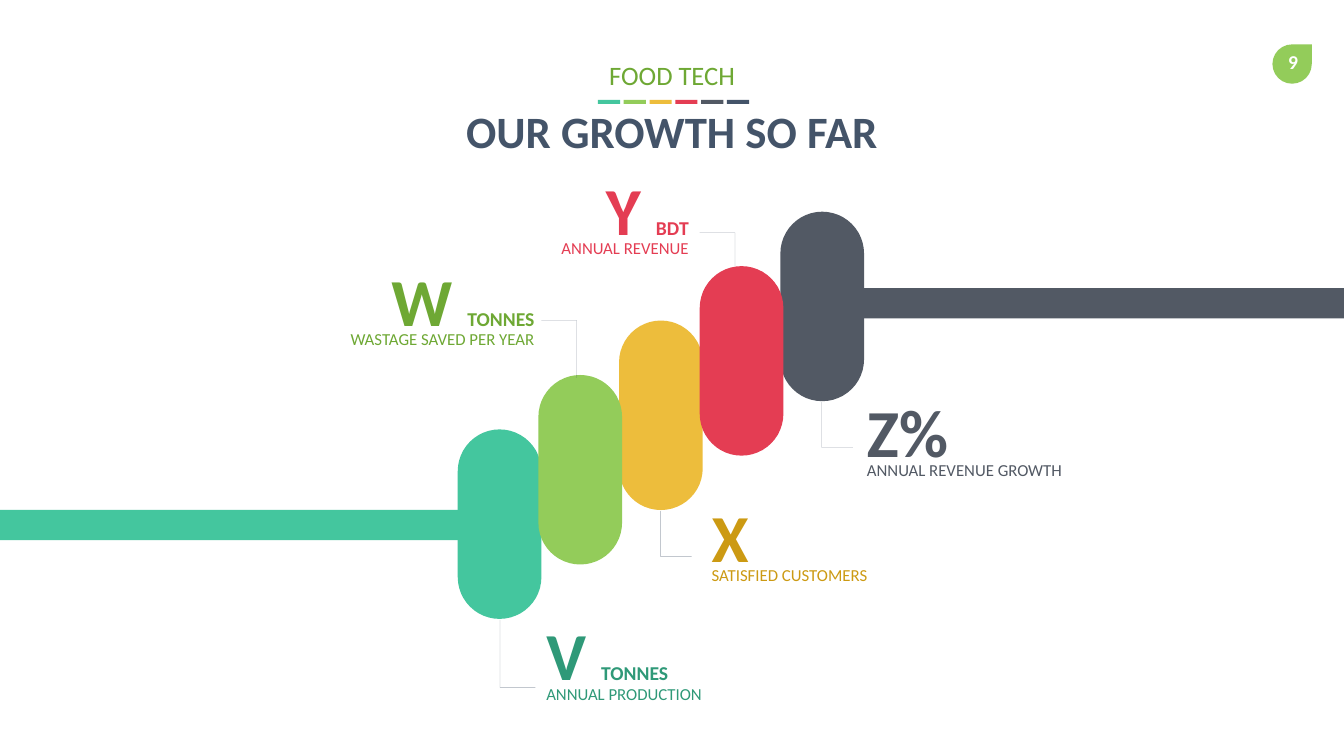
from dataclasses import dataclass

from lxml import etree
from pptx import Presentation
from pptx.dml.color import RGBColor
from pptx.enum.shapes import MSO_CONNECTOR, MSO_SHAPE
from pptx.enum.text import PP_ALIGN
from pptx.oxml.ns import qn
from pptx.shapes.autoshape import Shape
from pptx.slide import Slide
from pptx.util import Inches, Pt

RECT, PILL, TEARDROP = MSO_SHAPE.RECTANGLE, MSO_SHAPE.ROUNDED_RECTANGLE, MSO_SHAPE.TEAR
ELBOW = MSO_CONNECTOR.ELBOW
LEFT, CENTER, RIGHT = PP_ALIGN.LEFT, PP_ALIGN.CENTER, PP_ALIGN.RIGHT

TEAL = RGBColor(0x44, 0xC6, 0x9E)
GREEN = RGBColor(0x93, 0xCC, 0x5A)
YELLOW = RGBColor(0xED, 0xBD, 0x3C)
RED = RGBColor(0xE4, 0x3D, 0x53)
SLATE = RGBColor(0x52, 0x59, 0x64)
NAVY = RGBColor(0x44, 0x54, 0x69)
DEEP_TEAL = RGBColor(0x2F, 0x99, 0x78)
DEEP_GREEN = RGBColor(0x6E, 0xA8, 0x34)
DEEP_YELLOW = RGBColor(0xCC, 0x9A, 0x13)
WHITE = RGBColor(0xFF, 0xFF, 0xFF)

FONT = "Calibri"
PILL_COLORS = (TEAL, GREEN, YELLOW, RED, SLATE)
PILL_STACKING = (0, 2, 4, 3, 1)
DASH_COLORS = (*PILL_COLORS, NAVY)
DASH_PITCH = (7.21 - 5.93) / 5
FIGURE_WIDTH, FIGURE_HEIGHT = 1.96, 0.88
CAPTION_DROP, CAPTION_HEIGHT = 0.69, 0.3


@dataclass(frozen=True)
class Box:
    left: float
    top: float
    width: float
    height: float

    def lengths(self) -> tuple[Inches, ...]:
        return tuple(Inches(n) for n in (self.left, self.top, self.width, self.height))


@dataclass(frozen=True)
class Words:
    text: str
    size: float
    color: RGBColor
    bold: bool = False


@dataclass(frozen=True)
class Milestone:
    figure: str
    unit: str
    caption: str
    color: RGBColor
    align: PP_ALIGN
    left: float
    top: float
    leader_start: tuple[float, float]
    leader_end: tuple[float, float]
    caption_width: float = 2.06


MILESTONES = (
    Milestone("V ", "TONNES", "ANNUAL PRODUCTION", DEEP_TEAL, LEFT,
              5.32, 6.04, (5.31, 6.82), (4.96, 6.15)),
    Milestone("W ", "TONNES", "WASTAGE SAVED PER YEAR", DEEP_GREEN, RIGHT,
              3.44, 2.52, (5.37, 3.18), (5.72, 3.75)),
    Milestone("X", "", "SATISFIED CUSTOMERS", DEEP_YELLOW, LEFT,
              6.96, 4.86, (6.86, 5.52), (6.55, 5.07)),
    Milestone("Y ", "BDT", "ANNUAL REVENUE", RED, RIGHT,
              4.97, 1.62, (6.94, 2.31), (7.29, 2.64)),
    Milestone("Z%", "", "ANNUAL REVENUE GROWTH", SLATE, LEFT,
              8.5, 3.82, (8.46, 4.44), (8.15, 3.99), 2.33),
)


def add_block(slide: Slide, kind: MSO_SHAPE, box: Box, color: RGBColor) -> Shape:
    block = slide.shapes.add_shape(kind, *box.lengths())
    block.shadow.inherit = False
    block.fill.solid()
    block.fill.fore_color.rgb = color
    block.line.fill.background()
    return block


def add_words(slide: Slide, box: Box, align: PP_ALIGN, *parts: Words,
              wrap: bool = True) -> None:
    frame = slide.shapes.add_textbox(*box.lengths()).text_frame
    frame.word_wrap = wrap
    paragraph = frame.paragraphs[0]
    paragraph.alignment = align
    for part in parts:
        run = paragraph.add_run()
        run.text = part.text
        formats = {"name": FONT, "size": Pt(part.size), "bold": part.bold}
        for attribute, value in formats.items():
            setattr(run.font, attribute, value)
        run.font.color.rgb = part.color


def add_leader(slide: Slide, start: tuple[float, float], end: tuple[float, float]) -> None:
    leader = slide.shapes.add_connector(ELBOW, *(Inches(n) for n in (*start, *end)))
    leader.line.width = Pt(0.25)
    leader.line.color.rgb = NAVY
    properties = leader._element.spPr
    properties.find(qn("a:prstGeom")).set("prst", "bentConnector2")
    tint = next(properties.iter(qn("a:srgbClr")))
    etree.SubElement(tint, qn("a:alpha")).set("val", "50000")
    etree.SubElement(properties, qn("a:effectLst"))


def add_milestone(slide: Slide, milestone: Milestone) -> None:
    figure = [Words(milestone.figure, 48, milestone.color, True)]
    if milestone.unit:
        figure.append(Words(milestone.unit, 14, milestone.color, True))
    add_words(slide, Box(milestone.left, milestone.top, FIGURE_WIDTH, FIGURE_HEIGHT),
              milestone.align, *figure)
    caption_left = milestone.left
    if milestone.align == RIGHT:
        caption_left += FIGURE_WIDTH - milestone.caption_width
    add_words(slide, Box(caption_left, milestone.top + CAPTION_DROP,
                         milestone.caption_width, CAPTION_HEIGHT),
              milestone.align, Words(milestone.caption, 12, milestone.color))


def add_heading(slide: Slide) -> None:
    add_block(slide, TEARDROP, Box(12.62, 0.44, 0.39, 0.39), GREEN)
    add_words(slide, Box(12.61, 0.45, 0.43, 0.34), CENTER,
              Words("9", 14, WHITE, True), wrap=False)
    add_words(slide, Box(0.94, 0.98, 11.45, 0.64), CENTER,
              Words("OUR GROWTH SO FAR", 32, NAVY, True))
    for index, color in enumerate(DASH_COLORS):
        add_block(slide, RECT, Box(5.93 + index * DASH_PITCH, 0.99, 0.22, 0.04), color)
    add_words(slide, Box(0.94, 0.54, 11.45, 0.42), CENTER,
              Words("FOOD TECH", 19, DEEP_GREEN))


def add_staircase(slide: Slide) -> None:
    add_block(slide, RECT, Box(0, 5.06, 4.55, 0.3), TEAL)
    add_block(slide, RECT, Box(8.55, 2.86, 4.78, 0.3), SLATE)
    for step in PILL_STACKING:
        box = Box(4.54 + 0.8 * step, 4.26 - 0.54 * step, 0.83, 1.88)
        add_block(slide, PILL, box, PILL_COLORS[step]).adjustments[0] = 0.5


def main() -> None:
    presentation = Presentation()
    presentation.slide_width = Inches(13.33)
    presentation.slide_height = Inches(7.5)
    slide = presentation.slides.add_slide(presentation.slide_layouts[6])
    add_heading(slide)
    add_staircase(slide)
    for milestone in MILESTONES:
        add_leader(slide, milestone.leader_start, milestone.leader_end)
    for milestone in MILESTONES:
        add_milestone(slide, milestone)
    presentation.save("out.pptx")


if __name__ == "__main__":
    main()
